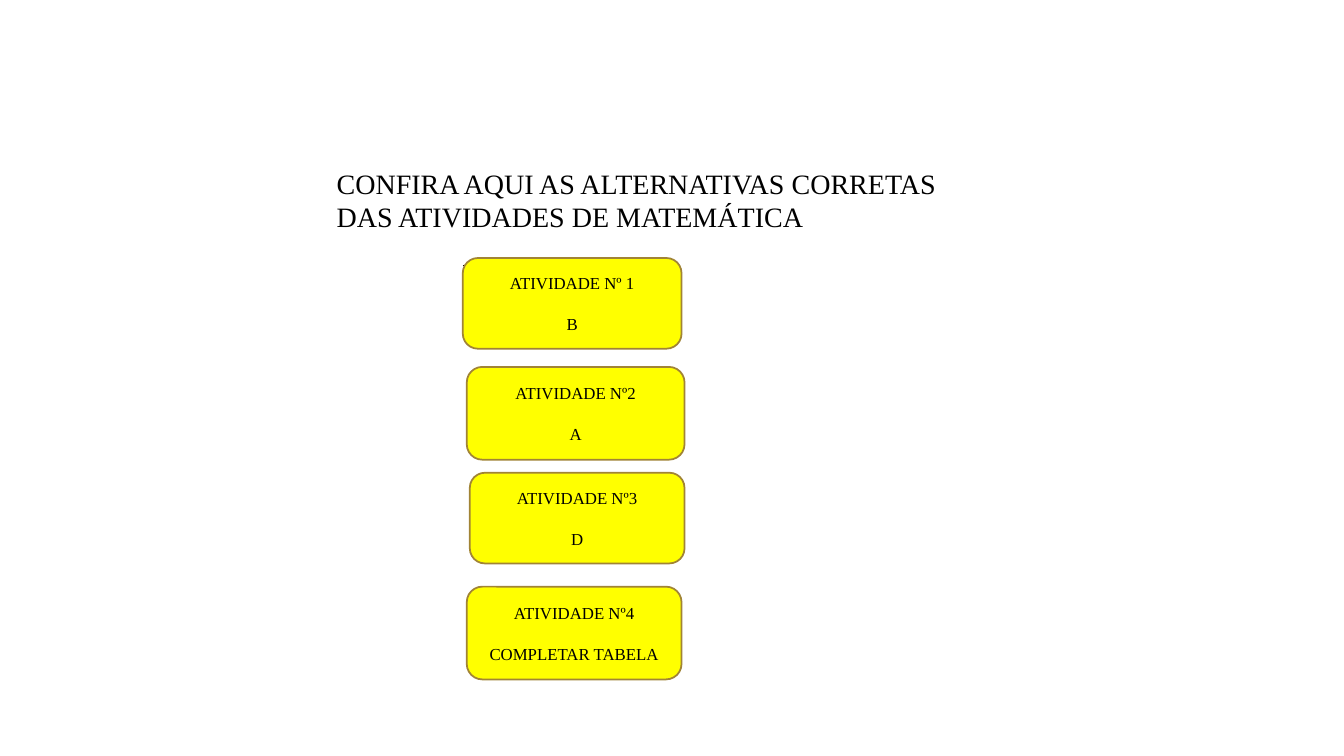
from dataclasses import dataclass

from lxml import etree
from pptx import Presentation
from pptx.dml.color import RGBColor
from pptx.enum.shapes import MSO_CONNECTOR, MSO_SHAPE
from pptx.enum.text import MSO_ANCHOR, PP_ALIGN
from pptx.oxml.ns import qn
from pptx.util import Inches, Pt

ROUNDED = MSO_SHAPE.ROUNDED_RECTANGLE
STRAIGHT = MSO_CONNECTOR.STRAIGHT
MIDDLE = MSO_ANCHOR.MIDDLE
CENTER = PP_ALIGN.CENTER


@dataclass(frozen=True)
class Theme:
    font: str = "Times New Roman"
    text: RGBColor = RGBColor(0x00, 0x00, 0x00)
    card: RGBColor = RGBColor(0xFF, 0xFF, 0x00)
    border: RGBColor = RGBColor(0xA1, 0x84, 0x35)
    title_size: Pt = Pt(20)
    card_size: Pt = Pt(12)
    answer_gap: Pt = Pt(15)
    border_width: Pt = Pt(1.25)
    tick_width: Pt = Pt(0.75)


THEME = Theme()

TITLE = "CONFIRA AQUI AS ALTERNATIVAS CORRETAS DAS ATIVIDADES DE MATEMÁTICA"
CARDS = [
    ("ATIVIDADE Nº 1", "B", (4.59, 2.56, 2.17, 0.9)),
    ("ATIVIDADE Nº2", "A", (4.63, 3.64, 2.16, 0.92)),
    ("ATIVIDADE Nº3", "D", (4.66, 4.69, 2.13, 0.9)),
    ("ATIVIDADE Nº4", "COMPLETAR TABELA", (4.63, 5.82, 2.13, 0.92)),
]


def add_run(p, text, size):
    r = p.add_run()
    r.text = text
    r.font.name = THEME.font
    r.font.size = size
    r.font.color.rgb = THEME.text


def add_title(slide, box):
    tf = slide.shapes.add_textbox(*map(Inches, box)).text_frame
    tf.word_wrap = True
    add_run(tf.paragraphs[0], TITLE, THEME.title_size)


def add_tick(slide, box):
    x, y, w, h = map(Inches, box)
    line = slide.shapes.add_connector(STRAIGHT, x, y, x + w, y + h)
    line.line.color.rgb = THEME.text
    line.line.width = THEME.tick_width
    etree.SubElement(line._element.spPr, qn("a:effectLst"))


def add_card(slide, activity, answer, box):
    sp = slide.shapes.add_shape(ROUNDED, *map(Inches, box))
    sp.shadow.inherit = False
    sp.fill.solid()
    sp.fill.fore_color.rgb = THEME.card
    sp.line.color.rgb = THEME.border
    sp.line.width = THEME.border_width
    tf = sp.text_frame
    tf.word_wrap = True
    tf.vertical_anchor = MIDDLE
    p = tf.paragraphs[0]
    p.alignment = CENTER
    add_run(p, activity, THEME.card_size)
    p = tf.add_paragraph()
    p.alignment = CENTER
    p.space_before = THEME.answer_gap
    add_run(p, answer, THEME.card_size)


def main():
    prs = Presentation()
    prs.slide_width = Inches(13.33)
    prs.slide_height = Inches(7.5)
    slide = prs.slides.add_slide(prs.slide_layouts[6])
    add_tick(slide, (4.59, 2.63, 0.07, 0))
    add_title(slide, (3.24, 1.6, 6.67, 0.77))
    for activity, answer, box in CARDS:
        add_card(slide, activity, answer, box)
    prs.save("out.pptx")


if __name__ == "__main__":
    main()
